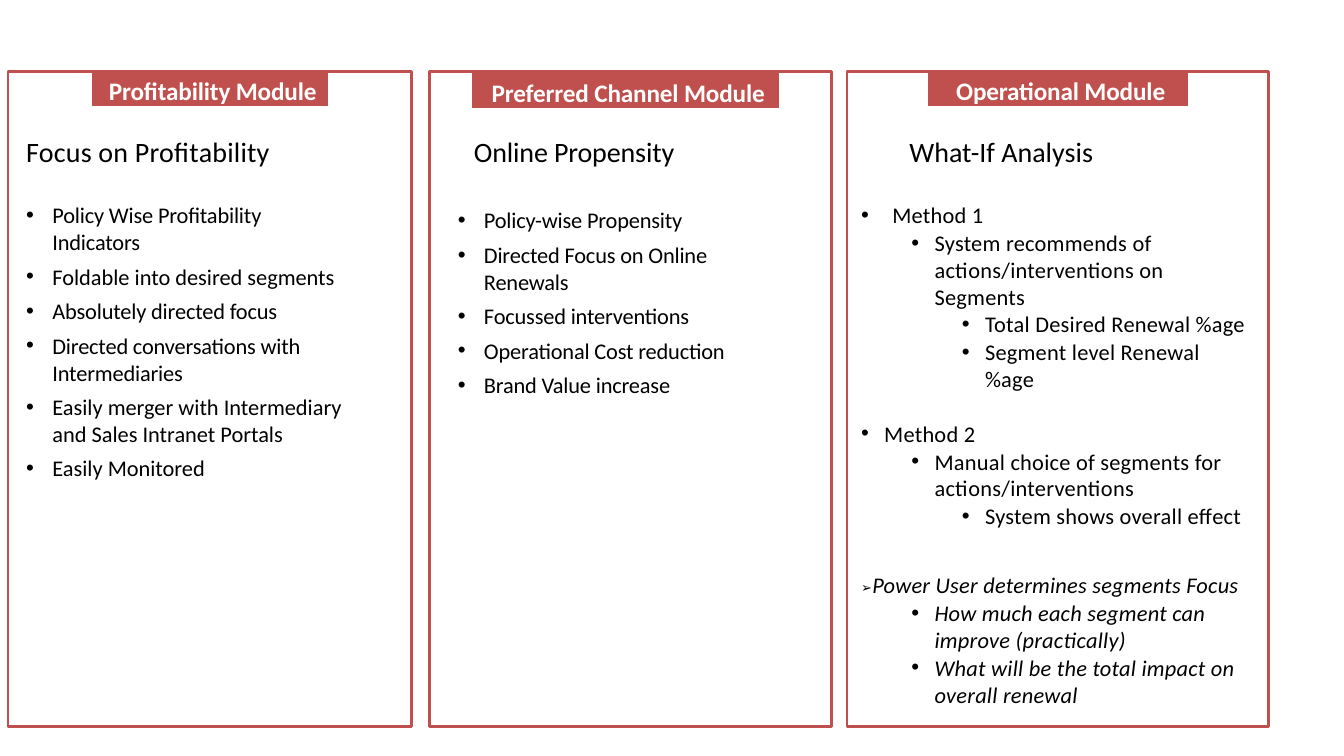
from dataclasses import dataclass

from lxml import etree
from pptx import Presentation
from pptx.dml.color import RGBColor
from pptx.enum import shapes, text
from pptx.oxml import ns
from pptx.util import Inches, Pt


@dataclass(frozen=True)
class Theme:
    font: str = "Calibri"
    accent: RGBColor = RGBColor.from_string("C0504D")
    black: RGBColor = RGBColor.from_string("000000")
    white: RGBColor = RGBColor.from_string("FFFFFF")
    label_size: int = 18
    heading_size: int = 20
    body_size: int = 16


@dataclass
class Item:
    text: str
    level: int = 0
    before: float = 5.4
    hang: float = 0.26
    spacing: float = -0.1
    bullet: bool = True
    italic: bool = False


theme = Theme()
STEP = 0.5  # indent added by each bullet level


def add_run(paragraph, content, spacing, **format_values):
    """Add a run; spacing is the space between letters in points."""
    run = paragraph.add_run()
    run.text = content
    run.font.name = theme.font
    run.font.color.rgb = format_values.pop("color", theme.black)
    for name, value in format_values.items():
        setattr(run.font, name, value)
    run.font._element.set("spc", str(round(spacing * 100)))
    return run


def prepare_frame(shape, top_inset=0):
    """Clear the insets, wrap the text and return its frame."""
    frame = shape.text_frame
    values = {"margin_left": 0, "margin_right": 0, "margin_bottom": 0,
              "margin_top": Inches(top_inset), "word_wrap": True,
              "vertical_anchor": text.MSO_ANCHOR.TOP}
    for name, value in values.items():
        setattr(frame, name, value)
    return frame


method = {"hang": 0.23, "spacing": 0.2}
focus = {**method, "italic": True}
modules = [
    {
        "panel": (0.08, 4), "label": (0.92, 0.71, 2.33),
        "heading": (0.25, 3.1), "body": (0.25, 2, 3.24, 2.77),
        "bullet_start": 0.01, "heading_spacing": 0.15,
        "title": "Profitability Module", "subtitle": "Focus on Profitability",
        "items": [
            Item("Policy Wise Profitability Indicators", before=0),
            Item("Foldable into desired segments", spacing=0),
            Item("Absolutely directed focus"),
            Item("Directed conversations with Intermediaries"),
            Item("Easily merger with Intermediary and Sales Intranet Portals", spacing=0),
            Item("Easily Monitored", spacing=0),
        ],
    },
    {
        "panel": (4.26, 3.99), "label": (4.69, 0.73, 3.03),
        "heading": (4.69, 3.59), "body": (4.47, 2.05, 3.38, 1.9),
        "bullet_start": 0.07, "heading_spacing": -0.1,
        "title": "Preferred Channel Module", "subtitle": "Online Propensity",
        "items": [
            Item("Policy-wise Propensity", before=0),
            Item("Directed Focus on Online Renewals"),
            Item("Focussed interventions"),
            Item("Operational Cost reduction"),
            Item("Brand Value increase"),
        ],
    },
    {
        "panel": (8.4, 4.18), "label": (9.21, 0.71, 2.57),
        "heading": (9.01, 2.93), "body": (8.42, 2, 4, 5.07),
        "bullet_start": 0.12, "heading_spacing": 0,
        "title": "Operational Module", "subtitle": "What-If Analysis",
        "items": [
            Item("Method 1", before=0, hang=0.31, spacing=0.2),
            Item("System recommends of actions/interventions on Segments", 1, 0.8, **method),
            Item("Total Desired Renewal %age", 2, 0.2, **method),
            Item("Segment level Renewal %age", 2, 0.8, **method),
            Item("Method 2", 0, 19.7, **method),
            Item("Manual choice of segments for actions/interventions", 1, 0.8, **method),
            Item("System shows overall effect", 2, 0.8, **method),
            Item("Power User determines segments Focus", 0, 29.7, hang=0,
                 spacing=0.2, bullet=False, italic=True),
            Item("How much each segment can improve (practically)", 1, 0.8, **focus),
            Item("What will be the total impact on overall renewal", 1, 0.8, **focus),
        ],
    },
]

presentation = Presentation()
presentation.slide_width = Inches(13.33)
presentation.slide_height = Inches(7.5)
slide = presentation.slides.add_slide(presentation.slide_layouts[6])

for module in modules:
    left, width = module["panel"]
    panel = slide.shapes.add_shape(shapes.MSO_SHAPE.RECTANGLE, Inches(left), Inches(0.71),
                                   Inches(width), Inches(6.5))
    panel.fill.background()

    left, top, width = module["label"]
    label = slide.shapes.add_shape(shapes.MSO_SHAPE.RECTANGLE, Inches(left), Inches(top),
                                   Inches(width), Inches(0.34))
    label.fill.solid()
    label.fill.fore_color.rgb = theme.accent
    for shape, line_width in ((panel, 2), (label, 0.5)):
        shape.shadow.inherit = False
        shape.line.color.rgb = theme.accent
        shape.line.width = Pt(line_width)

    paragraph = prepare_frame(label, 0.04).paragraphs[0]
    paragraph.alignment = text.PP_ALIGN.CENTER
    paragraph._p.get_or_add_pPr().set("marL", str(Inches(0.05)))
    add_run(paragraph, module["title"], -0.1, size=Pt(theme.label_size),
            bold=True, color=theme.white)

    left, width = module["heading"]
    heading = slide.shapes.add_textbox(Inches(left), Inches(1.33), Inches(width), Inches(0.34))
    paragraph = prepare_frame(heading).paragraphs[0]
    paragraph._p.get_or_add_pPr().set("marL", str(Inches(0.01)))
    add_run(paragraph, module["subtitle"], module["heading_spacing"],
            size=Pt(theme.heading_size))

    body = slide.shapes.add_textbox(*(Inches(value) for value in module["body"]))
    frame = prepare_frame(body)
    for index, item in enumerate(module["items"]):
        paragraph = frame.add_paragraph() if index else frame.paragraphs[0]
        paragraph.level = item.level
        if item.before:
            paragraph.space_before = Pt(item.before)
        properties = paragraph._p.get_or_add_pPr()
        indent = module["bullet_start"] + STEP * item.level + item.hang
        properties.set("marL", str(Inches(indent)))
        properties.set("indent", str(Inches(-item.hang)))
        size = Pt(theme.body_size)
        if item.bullet:
            etree.SubElement(properties, ns.qn("a:buFont"), typeface="Arial")
            etree.SubElement(properties, ns.qn("a:buChar"), char="•")
        else:
            arrow = add_run(paragraph, "➢", 0.3, size=size)
            arrow.font._element.set("baseline", "3000")
        add_run(paragraph, item.text, item.spacing, size=size, italic=item.italic)

presentation.save("out.pptx")
